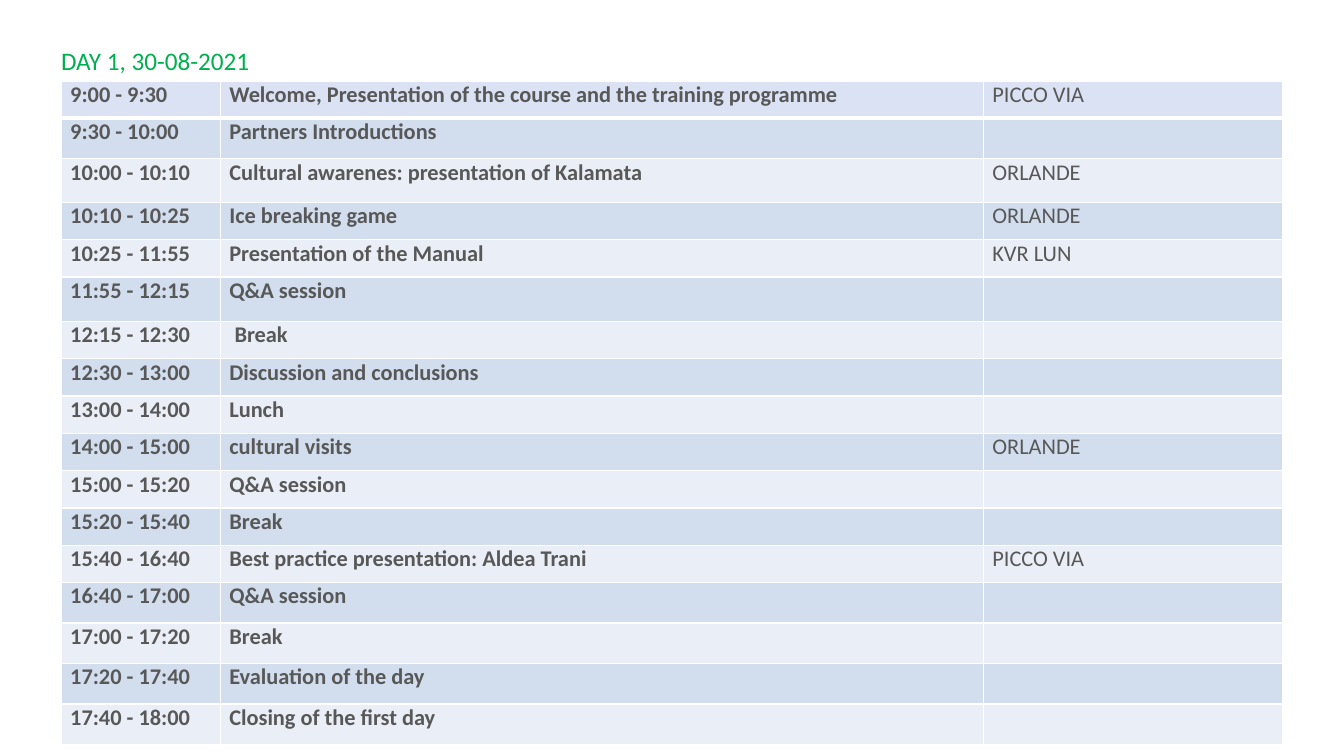
from typing import NamedTuple

from lxml import etree
from pptx import Presentation
from pptx.dml.color import RGBColor
from pptx.enum import text
from pptx.oxml import ns
from pptx.util import Cm, Pt

FONT = "Calibri"
TITLE_GREEN = "00AF50"
TEXT_GREY = "585858"
OPENING_FILL = "DAE2F3"
BAND_FILLS = ("EAEEF7", "D2DEEE")
BORDER = "FFFFFF"
THIN, THICK = 1, 3
COLUMN_WIDTHS = (4.01, 19.23, 7.54)
INDENT = 0.23
TITLE_ONLY = 5


class Session(NamedTuple):
    time: str
    activity: str
    host: str = ""
    height: float = 0.94
    activity_indent: float = INDENT


SESSIONS = [
    Session("9:00 - 9:30", "Welcome, Presentation of the course and the training programme", "PICCO VIA"),
    Session("9:30 - 10:00", "Partners Introductions", height=1.02),
    Session("10:00 - 10:10", "Cultural awarenes: presentation of Kalamata", "ORLANDE", height=1.1),
    Session("10:10 - 10:25", "Ice breaking game", "ORLANDE"),
    Session("10:25 - 11:55", "Presentation of the Manual", "KVR LUN"),
    Session("11:55 - 12:15", "Q&A session", height=1.12),
    Session("12:15 - 12:30", "Break", activity_indent=0.36),
    Session("12:30 - 13:00", "Discussion and conclusions"),
    Session("13:00 - 14:00", "Lunch"),
    Session("14:00 - 15:00", "cultural visits", "ORLANDE"),
    Session("15:00 - 15:20", "Q&A session"),
    Session("15:20 - 15:40", "Break"),
    Session("15:40 - 16:40", "Best practice presentation: Aldea Trani", "PICCO VIA"),
    Session("16:40 - 17:00", "Q&A session", height=1.02),
    Session("17:00 - 17:20", "Break", height=1.02),
    Session("17:20 - 17:40", "Evaluation of the day", height=1.02),
    Session("17:40 - 18:00", "Closing of the first day", height=1.02),
]


def color(hex_value: str) -> RGBColor:
    return RGBColor.from_string(hex_value)


def format_spans(para, size: float, hex_value: str, bold: bool = False) -> None:
    for span in para.runs:
        span.font.name = FONT
        span.font.size = Pt(size)
        span.font.bold = bold
        span.font.color.rgb = color(hex_value)


def add_borders(cell, top: float, bottom: float) -> None:
    """Draw the four cell edges; widths are in points."""
    properties = cell._tc.get_or_add_tcPr()
    edges = {"lnL": THIN, "lnR": THIN, "lnT": top, "lnB": bottom}
    for tag, width in edges.items():
        line = etree.SubElement(properties, ns.qn(f"a:{tag}"), w=str(Pt(width)))
        fill = etree.SubElement(line, ns.qn("a:solidFill"))
        etree.SubElement(fill, ns.qn("a:srgbClr"), val=BORDER)


def add_title(page) -> None:
    title = page.shapes.title
    title.left, title.top, title.width, title.height = Cm(1.54), Cm(1.1), Cm(4.83), Cm(0.84)
    frame = title.text_frame
    frame.text = "DAY 1, 30-08-2021"
    frame.margin_left = frame.margin_right = frame.margin_top = frame.margin_bottom = 0
    frame.word_wrap = False
    frame.auto_size = text.MSO_AUTO_SIZE.NONE
    frame.vertical_anchor = text.MSO_ANCHOR.MIDDLE
    para = frame.paragraphs[0]
    para.alignment = text.PP_ALIGN.LEFT
    format_spans(para, 18, TITLE_GREEN)


def fill_row(table, index: int, session: Session) -> None:
    table.rows[index].height = Cm(session.height)
    entries = (
        (session.time, INDENT, True),
        (session.activity, session.activity_indent, True),
        (session.host, INDENT, False),
    )
    for column, (wording, indent, bold) in enumerate(entries):
        cell = table.cell(index, column)
        cell.margin_left = Cm(indent)
        cell.margin_right = cell.margin_top = cell.margin_bottom = 0
        cell.vertical_anchor = text.MSO_ANCHOR.TOP
        add_borders(
            cell,
            top=THICK if index == 1 else THIN,
            bottom=THICK if index == 0 else THIN,
        )
        cell.fill.solid()
        cell.fill.fore_color.rgb = color(BAND_FILLS[index % 2] if index else OPENING_FILL)
        if wording:
            cell.text_frame.text = wording
            format_spans(cell.text_frame.paragraphs[0], 16, TEXT_GREY, bold)


def add_schedule(page) -> None:
    height = sum(session.height for session in SESSIONS)
    table = page.shapes.add_table(
        len(SESSIONS), len(COLUMN_WIDTHS),
        Cm(1.54), Cm(2.04), Cm(sum(COLUMN_WIDTHS)), Cm(height),
    ).table
    table.first_row = table.horz_banding = False
    for column, width in zip(table.columns, COLUMN_WIDTHS):
        column.width = Cm(width)
    for index, session in enumerate(SESSIONS):
        fill_row(table, index, session)


def main() -> None:
    deck = Presentation()
    deck.slide_width, deck.slide_height = Cm(33.87), Cm(19.05)
    page = deck.slides.add_slide(deck.slide_layouts[TITLE_ONLY])
    add_title(page)
    add_schedule(page)
    deck.save("out.pptx")


if __name__ == "__main__":
    main()
